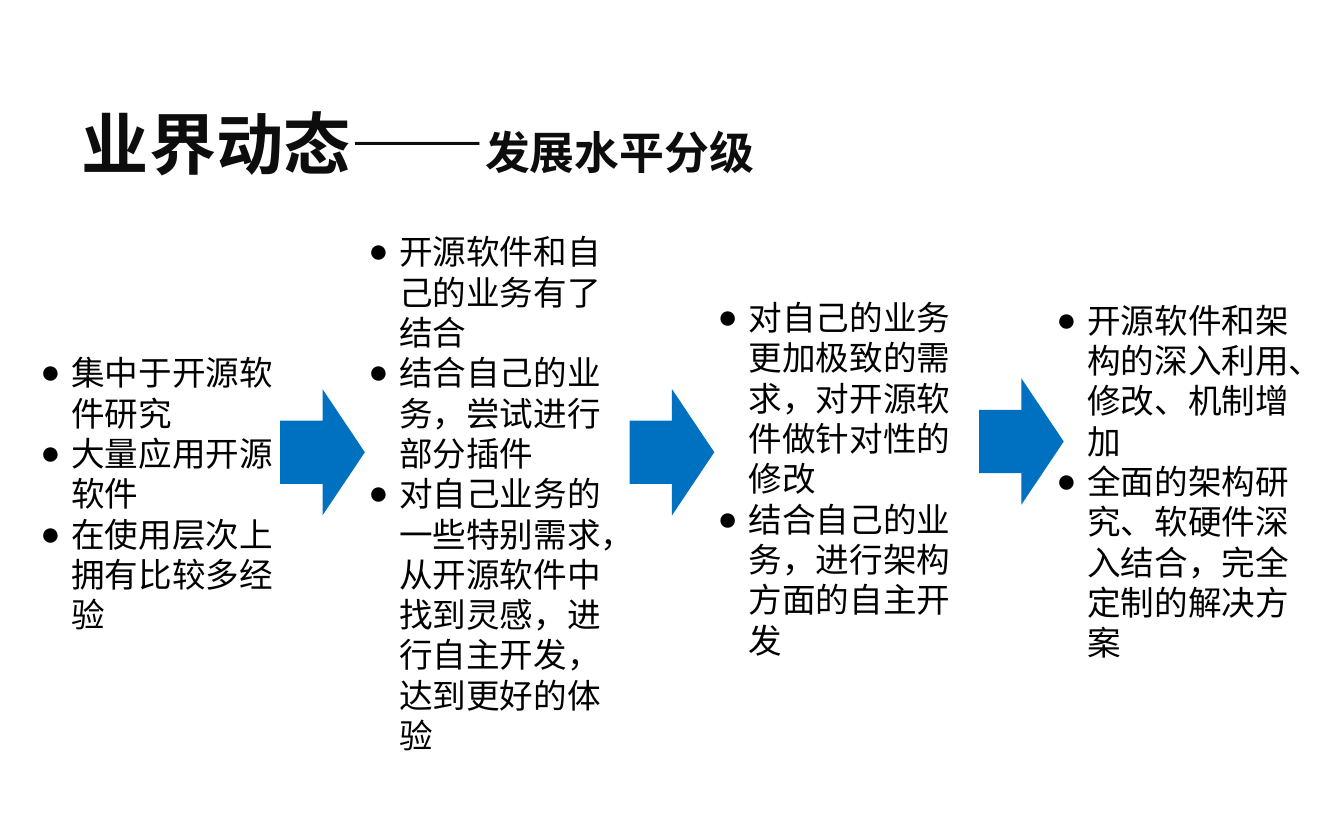
from dataclasses import dataclass

from lxml import etree
from pptx import Presentation
from pptx.dml.color import RGBColor
from pptx.enum.shapes import MSO_SHAPE
from pptx.enum.text import MSO_ANCHOR, MSO_AUTO_SIZE, PP_ALIGN
from pptx.oxml.ns import qn
from pptx.util import Inches, Pt

DOWN_ARROW = MSO_SHAPE.DOWN_ARROW
TOP, MIDDLE = MSO_ANCHOR.TOP, MSO_ANCHOR.MIDDLE
NO_AUTOFIT = MSO_AUTO_SIZE.NONE
LEFT = PP_ALIGN.LEFT
COMPARISON_LAYOUT = 4


@dataclass(frozen=True)
class Theme:
    heading: RGBColor = RGBColor(0x0D, 0x0D, 0x0D)
    body: RGBColor = RGBColor(0, 0, 0)
    arrow: RGBColor = RGBColor(0x00, 0x70, 0xC0)
    heading_font: str = "Noto Sans CJK SC"
    body_font: str = "Arial"
    heading_size: float = 36
    subheading_size: float = 24
    body_size: float = 18
    body_leading: float = 21.6


@dataclass(frozen=True)
class Level:
    left: float
    top: float
    height: float
    items: tuple[str, ...]


THEME = Theme()
SLIDE_WIDTH, SLIDE_HEIGHT = 10, 6.25
LEVEL_WIDTH = 2.05
BULLET_INDENT = 0.23
ARROW_WIDTH, ARROW_HEIGHT = 0.94, 0.63
ARROW_LEFT, ARROW_STEP = 1.93, 2.6
ARROW_TOPS = (3.05, 3.05, 2.97)

LEVELS = (
    Level(0.2, 2.57, 1.92, (
        "集中于开源软件研究",
        "大量应用开源软件",
        "在使用层次上拥有比较多经验",
    )),
    Level(2.64, 1.67, 3.74, (
        "开源软件和自己的业务有了结合",
        "结合自己的业务，尝试进行部分插件",
        "对自己业务的一些特别需求，从开源软件中找到灵感，进行自主开发，达到更好的体验",
    )),
    Level(5.24, 2.16, 2.22, (
        "对自己的业务更加极致的需求，对开源软件做针对性的修改",
        "结合自己的业务，进行架构方面的自主开发",
    )),
    Level(7.76, 2.18, 2.22, (
        "开源软件和架构的深入利用、修改、机制增加",
        "全面的架构研究、软硬件深入结合，完全定制的解决方案",
    )),
)


def place(shape, left: float, top: float, width: float, height: float) -> None:
    shape.left, shape.top = Inches(left), Inches(top)
    shape.width, shape.height = Inches(width), Inches(height)


def prepare_frame(shape, anchor):
    frame = shape.text_frame
    frame.word_wrap = True
    frame.auto_size = NO_AUTOFIT
    frame.vertical_anchor = anchor
    return frame


def add_text(paragraph, text: str, *, font: str, size: float,
             color: RGBColor, bold: bool = False) -> None:
    run = paragraph.add_run()
    run.text = text
    run.font.name = font
    run.font.size = Pt(size)
    run.font.bold = bold
    run.font.color.rgb = color
    east_asian = etree.SubElement(run.font._element, qn("a:ea"))
    east_asian.set("typeface", font)


def add_bullet(paragraph) -> None:
    properties = paragraph._p.get_or_add_pPr()
    properties.set("marL", str(Inches(BULLET_INDENT)))
    properties.set("indent", str(-Inches(BULLET_INDENT)))
    etree.SubElement(properties, qn("a:buFont")).set("typeface", THEME.body_font)
    etree.SubElement(properties, qn("a:buChar")).set("char", "●")


def fill_title(title) -> None:
    place(title, 0.51, 0.76, 9, 0.61)
    paragraph = prepare_frame(title, MIDDLE).paragraphs[0]
    paragraph.alignment = LEFT
    for text, size in (("业界动态——", THEME.heading_size),
                       ("发展水平分级", THEME.subheading_size)):
        add_text(paragraph, text, font=THEME.heading_font, size=size,
                 color=THEME.heading, bold=True)


def fill_level(placeholder, level: Level) -> None:
    place(placeholder, level.left, level.top, LEVEL_WIDTH, level.height)
    frame = prepare_frame(placeholder, TOP)
    for index, item in enumerate(level.items):
        paragraph = frame.add_paragraph() if index else frame.paragraphs[0]
        add_bullet(paragraph)
        paragraph.alignment = LEFT
        paragraph.space_before = Pt(0)
        paragraph.line_spacing = Pt(THEME.body_leading)
        add_text(paragraph, item, font=THEME.body_font,
                 size=THEME.body_size, color=THEME.body)


def add_arrow(slide, left: float, top: float) -> None:
    arrow = slide.shapes.add_shape(
        DOWN_ARROW, Inches(left), Inches(top),
        Inches(ARROW_WIDTH), Inches(ARROW_HEIGHT))
    arrow.rotation = 270
    arrow.shadow.inherit = False
    arrow.fill.solid()
    arrow.fill.fore_color.rgb = THEME.arrow
    arrow.line.fill.background()


def main() -> None:
    presentation = Presentation()
    presentation.slide_width = Inches(SLIDE_WIDTH)
    presentation.slide_height = Inches(SLIDE_HEIGHT)
    slide = presentation.slides.add_slide(
        presentation.slide_layouts[COMPARISON_LAYOUT])
    title, *bodies = slide.placeholders
    fill_title(title)
    for placeholder, level in zip(bodies, LEVELS):
        fill_level(placeholder, level)
    for index, top in enumerate(ARROW_TOPS):
        add_arrow(slide, ARROW_LEFT + index * ARROW_STEP, top)
    presentation.save("out.pptx")


if __name__ == "__main__":
    main()
